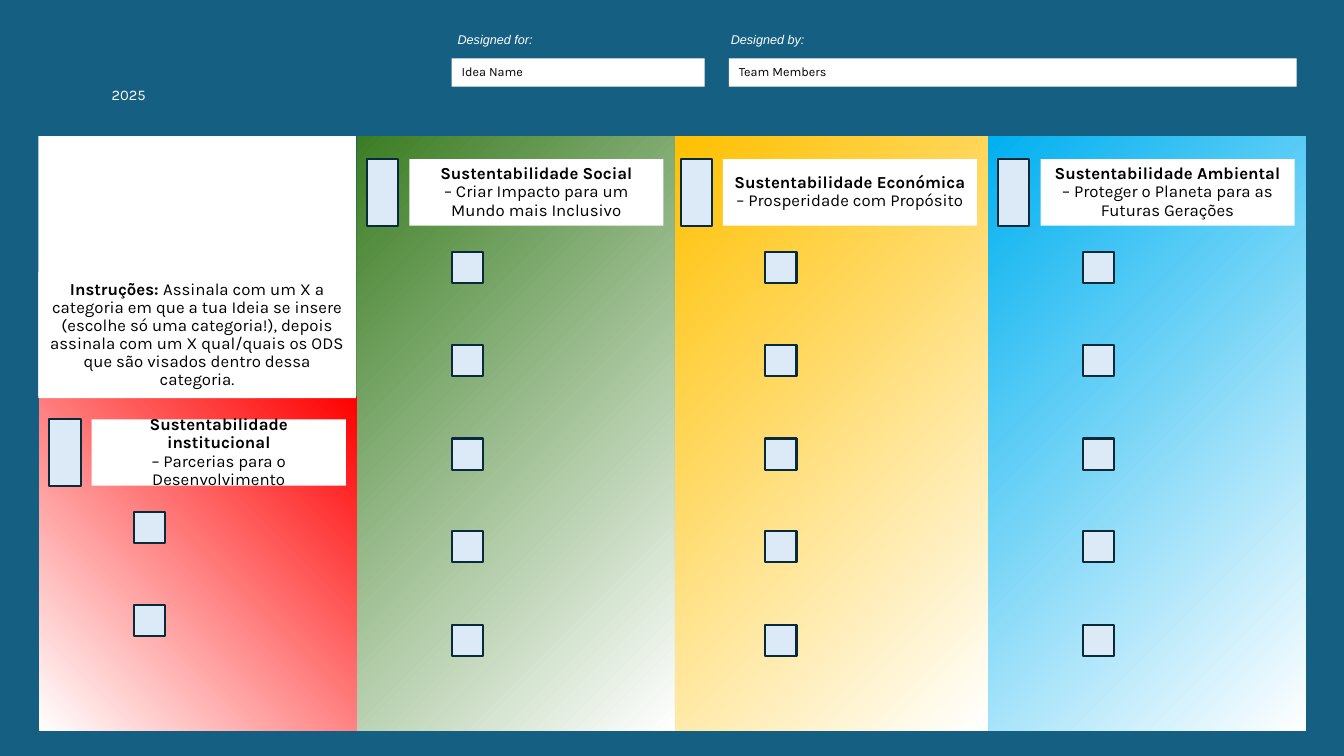
"""Build the sustainability category canvas slide."""
from dataclasses import dataclass

from pptx import Presentation
from pptx import util as u
from pptx.dml.color import RGBColor
from pptx.enum import shapes, text


@dataclass(frozen=True)
class Theme:
    """Colours, fonts and type sizes of the canvas."""
    back: str = "156082"
    white: str = "FFFFFF"
    ink: str = "000000"
    tick_fill: str = "DCEAF7"
    tick_line: str = "092A39"
    social: str = "3B7D23"
    economic: str = "FFC000"
    environment: str = "00B0F0"
    institution: str = "FF0000"
    font: str = "Karla"
    label_font: str = "Arial"
    body: float = 12
    year: float = 10.5
    small: float = 9


class Canvas:
    """Draws elements on one slide in px, at 100 px to the inch."""
    PX = u.Inches(1) // 100

    def __init__(self, prs, theme):
        """Add a blank slide with the theme background."""
        self.theme = theme
        self.s = prs.slides.add_slide(prs.slide_layouts[6])
        fill = self.s.background.fill
        fill.solid()
        fill.fore_color.rgb = RGBColor.from_string(theme.back)

    def emu(self, *lengths):
        """Turn px lengths into EMU."""
        return [n * self.PX for n in lengths]

    def rect(self, x, y, w, h, color):
        """Add a plain filled rectangle."""
        sp = self.s.shapes.add_shape(shapes.MSO_SHAPE.RECTANGLE, *self.emu(x, y, w, h))
        sp.shadow.inherit = False
        sp.fill.solid()
        sp.fill.fore_color.rgb = RGBColor.from_string(color)
        sp.line.fill.background()
        return sp

    def panel(self, x, y, w, h, color, angle):
        """Add a rectangle fading from a colour to white."""
        fill = self.rect(x, y, w, h, color).fill
        fill.gradient()
        fill.gradient_angle = angle
        for stop, tone, place in zip(fill.gradient_stops, (color, self.theme.white), (0, 1)):
            stop.color.rgb = RGBColor.from_string(tone)
            stop.position = place

    def tick(self, x, y, h=31):
        """Add a box to be marked with an X."""
        sp = self.rect(x, y, 31, h, self.theme.tick_fill)
        sp.line.color.rgb = RGBColor.from_string(self.theme.tick_line)
        sp.line.width = u.Pt(1.5)

    def style(self, r, size, color, font=None, bold=False, italic=False):
        """Format one run."""
        r.font.name = font or self.theme.font
        r.font.size = u.Pt(size)
        r.font.bold = bold
        r.font.italic = italic
        r.font.color.rgb = RGBColor.from_string(color)

    def card(self, x, y, w, h, paragraphs, size, align=text.PP_ALIGN.CENTER):
        """Add a white box whose paragraphs are lists of (words, bold) runs."""
        tf = self.rect(x, y, w, h, self.theme.white).text_frame
        tf.word_wrap = True
        tf.vertical_anchor = text.MSO_ANCHOR.MIDDLE
        for i, runs in enumerate(paragraphs):
            p = tf.add_paragraph() if i else tf.paragraphs[0]
            p.alignment = align
            p.line_spacing = 0.9
            for words, bold in runs:
                r = p.add_run()
                r.text = words
                self.style(r, size, self.theme.ink, bold=bold)

    def label(self, x, y, w, h, words, size, font=None, italic=False):
        """Add white text straight on the background."""
        tf = self.s.shapes.add_textbox(*self.emu(x, y, w, h)).text_frame
        tf.word_wrap = True
        tf.text = words
        self.style(tf.paragraphs[0].runs[0], size, self.theme.white, font, italic=italic)

    def pillar(self, x, y, color, name, aim, goals, angle=315):
        """Add a category panel with its header and goal boxes."""
        self.panel(x, y, 315, 725 - y, color, angle)
        top = y + 23
        self.tick(x + 10, top, 66)
        self.card(x + 52, top, 252, 66, [[(name, True)], [(aim, False)]], self.theme.body)
        for i in range(goals):
            self.tick(x + 94, top + 92 + 370 * i // 4)


def main():
    """Draw the canvas and save it."""
    theme = Theme()
    prs = Presentation()
    prs.slide_width, prs.slide_height = u.Inches(13.33), u.Inches(7.5)
    c = Canvas(prs, theme)

    c.pillar(665, 135, theme.economic, "Sustentabilidade Económica",
             "– Prosperidade com Propósito", 5)
    c.pillar(980, 135, theme.environment, "Sustentabilidade Ambiental",
             "– Proteger o Planeta para as Futuras Gerações", 5)
    c.pillar(354, 135, theme.social, "Sustentabilidade Social",
             "– Criar Impacto para um Mundo mais Inclusivo", 5)
    c.pillar(39, 393, theme.institution, "Sustentabilidade institucional",
             "– Parcerias para o Desenvolvimento", 2, angle=225)

    c.rect(38, 135, 315, 258, theme.white)
    c.card(38, 270, 315, 125, [[
        ("Instruções: ", True),
        ("Assinala com um X a categoria em que a tua Ideia se insere (escolhe só uma "
         "categoria!), depois assinala com um X qual/quais os ODS que são visados "
         "dentro dessa categoria.", False)]], theme.body)

    c.label(101, 80, 64, 29, "2025", theme.year)
    for x, w, words in ((444, 221, "Designed for:"), (715, 153, "Designed by:")):
        c.label(x, 27, w, 25, words, theme.small, theme.label_font, italic=True)
    for x, w, words in ((448, 251, "Idea Name"), (723, 563, "Team Members")):
        c.card(x, 58, w, 28, [[(words, False)]], theme.small, text.PP_ALIGN.LEFT)

    prs.save("out.pptx")


if __name__ == "__main__":
    main()
